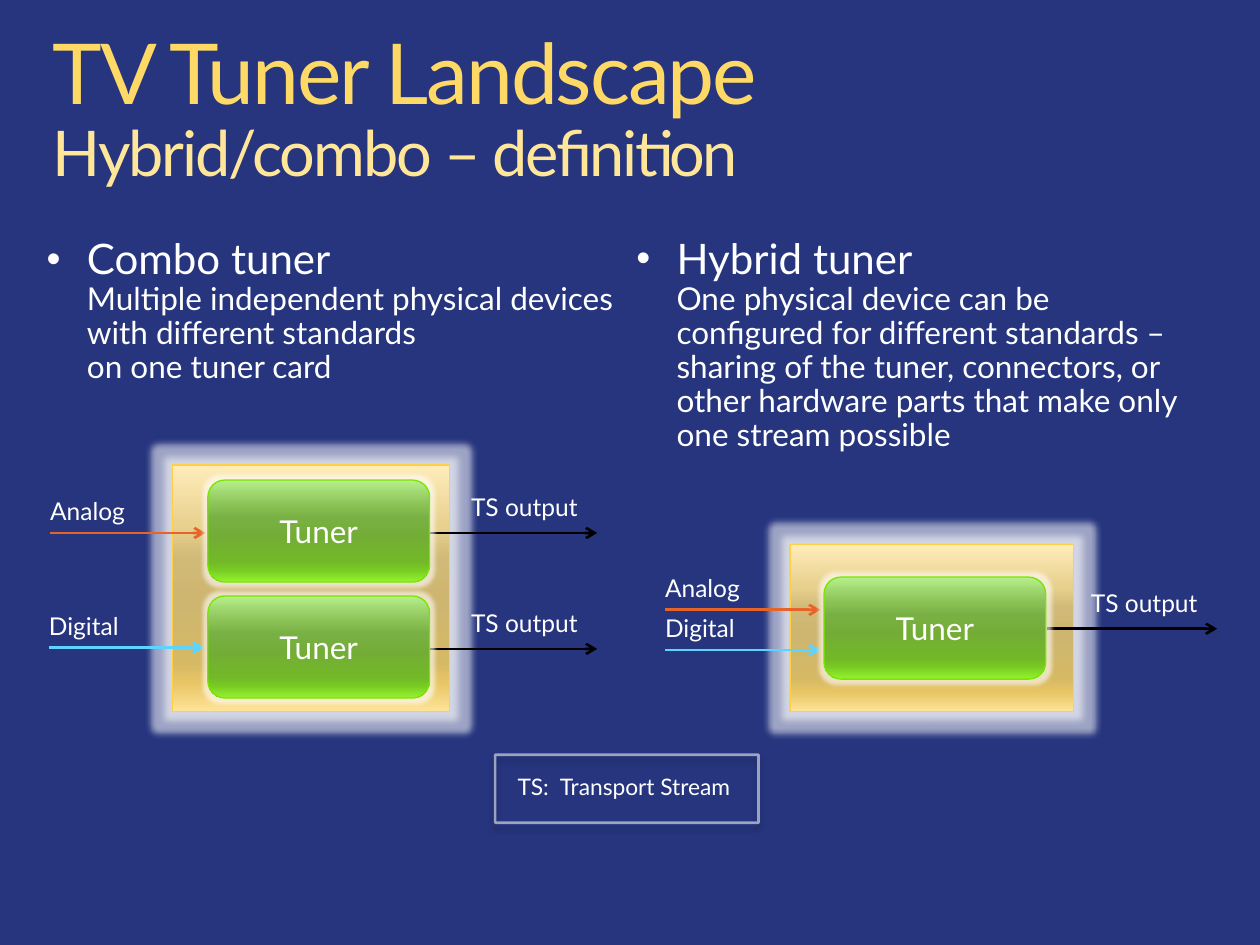
from dataclasses import dataclass

import pptx
import pptx.dml.color
import pptx.enum.shapes
import pptx.enum.text
import pptx.oxml
import pptx.oxml.ns
import pptx.util

COLUMNS, ROWS = 100, 75
WIDTH, HEIGHT = pptx.util.Inches(10), pptx.util.Inches(7.5)
FONT = "Lato"
DRAWING_NAMESPACE = "http://schemas.openxmlformats.org/drawingml/2006/main"
WHITE, BLACK, ANALOG, DIGITAL = "FFFFFF", "000000", "E76429", "5DD3FF"
STOPS = (0, 25, 38, 55, 80, 88, 100)
GOLD = ("FFECBA", "E8D08E", "D1B977", "CEB670", "D6B965", "E7C565", "FFE498")
GREEN = ("B6EF8B", "8AC155", "79B044", "73AD35", "72B828", "78CA22", "94F32F")
TUNER_SIZE = (17.6, 8.1)
SHAPES = pptx.enum.shapes.MSO_SHAPE


@dataclass
class Area:
    column: float
    row: float
    columns: float
    rows: float

    def emu(self) -> tuple:
        return (col(self.column), line_at(self.row), col(self.columns), line_at(self.rows))


@dataclass
class Wire:
    label: str
    color: str
    column: float
    row: float
    columns: float
    label_shift: tuple


@dataclass
class Definition:
    term: str
    lines: tuple
    area: Area


@dataclass
class Card:
    area: Area
    tuners: tuple
    wires: tuple


def col(count: float) -> int:
    return round(WIDTH * count / COLUMNS)


def line_at(count: float) -> int:
    return round(HEIGHT * count / ROWS)


def rgb(color: str) -> pptx.dml.color.RGBColor:
    return pptx.dml.color.RGBColor.from_string(color)


def drawing_xml(markup: str):
    """Parse one DrawingML element written without its namespace."""
    return pptx.oxml.parse_xml(f'<root xmlns="{DRAWING_NAMESPACE}">{markup}</root>')[0]


def color_xml(color: str, alpha: int = 100) -> str:
    return f'<srgbClr val="{color}"><alpha val="{alpha * 1000}"/></srgbClr>'


def set_effect(shape, effect: str = "") -> None:
    shape_properties = shape._element.spPr
    for old in shape_properties.findall(pptx.oxml.ns.qn("a:effectLst")):
        shape_properties.remove(old)
    shape_properties.append(drawing_xml(f"<effectLst>{effect}</effectLst>"))


def add_run(paragraph, text: str, size: float, color: str = WHITE):
    run = paragraph.add_run()
    run.text = text
    run.font.name = FONT
    run.font.size = pptx.util.Pt(size)
    run.font.color.rgb = rgb(color)
    return run


def add_text_area(slide, area: Area, margin: bool = True):
    frame = slide.shapes.add_textbox(*area.emu()).text_frame
    frame.word_wrap = True
    if not margin:
        frame.margin_left = frame.margin_right = 0
        frame.margin_top = frame.margin_bottom = 0
    return frame


def add_title(slide) -> None:
    paragraph = add_text_area(slide, Area(4.2, 2.5, 91.6, 12.7), margin=False).paragraphs[0]
    paragraph.line_spacing = 0.9
    heading = add_run(paragraph, "TV Tuner Landscape", 48, "FFD966")
    paragraph.add_line_break()
    subheading = add_run(paragraph, "Hybrid/combo – definition", 36, "FFE699")
    for run in (heading, subheading):
        run.font._element.set("spc", "-120")


def add_definition(slide, definition: Definition) -> None:
    paragraph = add_text_area(slide, definition.area, margin=False).paragraphs[0]
    paragraph.line_spacing = 0.9
    properties = paragraph._p.get_or_add_pPr()
    properties.set("marL", str(col(3.2)))
    properties.set("indent", str(-col(3.2)))
    for bullet in (f"<buClr>{color_xml(WHITE)}</buClr>", '<buSzPct val="95000"/>',
                   '<buFont typeface="Arial"/>', '<buChar char="•"/>'):
        properties.append(drawing_xml(bullet))
    add_run(paragraph, definition.term, 24)
    for line in definition.lines:
        paragraph.add_line_break()
        add_run(paragraph, line, 18)


def add_glowing_panel(slide, kind, area: Area, gradient: tuple, outline: str,
                      glow_points: float, glow_alpha: int):
    panel = slide.shapes.add_shape(kind, *area.emu())
    panel.fill.gradient()
    panel.fill.gradient_angle = 270
    stops = panel._element.spPr.find(".//" + pptx.oxml.ns.qn("a:gsLst"))
    for old in list(stops):
        stops.remove(old)
    for position, color in zip(STOPS, gradient):
        stops.append(drawing_xml(f'<gs pos="{position * 1000}">{color_xml(color)}</gs>'))
    panel.line.color.rgb = rgb(outline)
    panel.line.width = pptx.util.Pt(0.75)
    set_effect(panel, f'<glow rad="{pptx.util.Pt(glow_points)}">'
                      f"{color_xml(WHITE, glow_alpha)}</glow>")
    return panel


def add_tuner(slide, column: float, row: float) -> None:
    tuner = add_glowing_panel(slide, SHAPES.ROUNDED_RECTANGLE,
                              Area(column, row, *TUNER_SIZE), GREEN, "77E700", 5, 60)
    tuner.text_frame.vertical_anchor = pptx.enum.text.MSO_ANCHOR.MIDDLE
    paragraph = tuner.text_frame.paragraphs[0]
    paragraph.alignment = pptx.enum.text.PP_ALIGN.CENTER
    add_run(paragraph, "Tuner", 18)


def add_wire(slide, wire: Wire) -> None:
    arrow = slide.shapes.add_connector(
        pptx.enum.shapes.MSO_CONNECTOR.STRAIGHT, col(wire.column), line_at(wire.row),
        col(wire.column + wire.columns), line_at(wire.row))
    arrow.line.color.rgb = rgb(wire.color)
    arrow.line.width = pptx.util.Pt(1.5)
    arrow.line._get_or_add_ln().append(drawing_xml('<tailEnd type="arrow"/>'))
    set_effect(arrow)
    shift_columns, shift_rows = wire.label_shift
    label_area = Area(wire.column + shift_columns, wire.row + shift_rows, 11.6, 3.4)
    add_run(add_text_area(slide, label_area).paragraphs[0], wire.label, 14)


def input_wire(label: str, color: str, column: float, row: float) -> Wire:
    return Wire(label, color, column, row, 12.3, (-1, -3.4))


def output_wire(column: float, row: float) -> Wire:
    return Wire("TS output", BLACK, column, row, 13.5, (2.5, -3.7))


def add_card(slide, card: Card) -> None:
    add_glowing_panel(slide, SHAPES.RECTANGLE, card.area, GOLD, "FFCF46", 8, 55)
    for wire in card.wires:
        add_wire(slide, wire)
    for column, row in card.tuners:
        add_tuner(slide, column, row)


def add_legend(slide) -> None:
    border = slide.shapes.add_shape(SHAPES.ROUNDED_RECTANGLE,
                                    *Area(39.3, 59.9, 20.9, 5.4).emu())
    border.adjustments[0] = 0
    border.fill.background()
    border.line.color.rgb = rgb(WHITE)
    border.line.width = pptx.util.Pt(1.5)
    line_color = border.line._get_or_add_ln().find(".//" + pptx.oxml.ns.qn("a:srgbClr"))
    line_color.append(drawing_xml('<alpha val="55000"/>'))
    set_effect(border, f'<outerShdw blurRad="{pptx.util.Pt(4)}" dist="{pptx.util.Pt(3)}" '
                       f'dir="5400000">{color_xml(BLACK, 40)}</outerShdw>')
    legend = add_text_area(slide, Area(40.1, 60.8, 19.7, 3.2))
    legend.word_wrap = False
    add_run(legend.paragraphs[0], "TS:  Transport Stream", 13)


DEFINITIONS = (
    Definition("Hybrid tuner",
               ("One physical device can be configured for different standards – sharing of "
                "the tuner, connectors, or other hardware parts that make only one stream "
                "possible",), Area(50.5, 18.9, 45.1, 17.3)),
    Definition("Combo tuner",
               ("Multiple independent physical devices with different standards",
                "on one tuner card"), Area(3.7, 18.9, 45.1, 11.8)),
)
CARDS = (
    Card(Area(62.7, 43.2, 22.5, 13.3), ((65.4, 45.8),),
         (input_wire("Analog", ANALOG, 52.8, 48.4), input_wire("Digital", DIGITAL, 52.8, 51.6),
          output_wire(83.1, 49.9))),
    Card(Area(13.7, 36.9, 22, 19.6), ((16.5, 38.1), (16.5, 47.3)),
         (input_wire("Analog", ANALOG, 4, 42.3), input_wire("Digital", DIGITAL, 3.9, 51.4),
          output_wire(33.9, 42.3), output_wire(33.9, 51.5))),
)


def main() -> None:
    deck = pptx.Presentation()
    deck.slide_width, deck.slide_height = WIDTH, HEIGHT
    slide = deck.slides.add_slide(deck.slide_layouts[6])
    slide.background.fill.solid()
    slide.background.fill.fore_color.rgb = rgb("26357E")
    add_title(slide)
    for definition in DEFINITIONS:
        add_definition(slide, definition)
    for card in CARDS:
        add_card(slide, card)
    add_legend(slide)
    deck.save("out.pptx")


if __name__ == "__main__":
    main()
